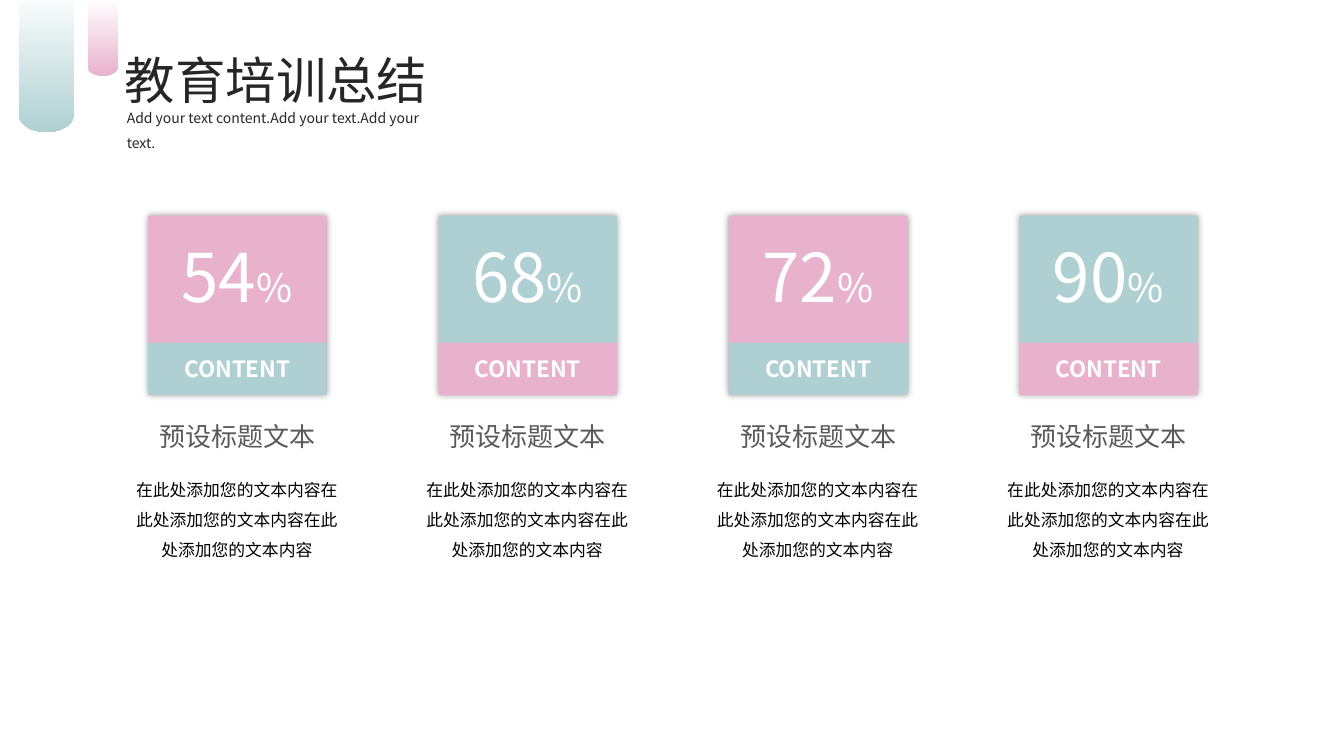
"""Builds the training summary slide with four percentage cards."""
import math
from dataclasses import dataclass

from lxml import etree
from pptx import Presentation
from pptx import util as u
from pptx.dml.color import RGBColor
from pptx.enum import shapes, text
from pptx.oxml.ns import qn


@dataclass(frozen=True)
class Theme:
    font: str = "Noto Sans CJK SC"
    pink: str = "E8B2CC"
    teal: str = "AFD0D2"
    white: str = "FFFFFF"
    ink: str = "262626"
    grey: str = "595959"
    black: str = "000000"
    title: float = 36
    subtitle: float = 10
    figure: float = 48
    percent: float = 28
    label: float = 16
    heading: float = 18.6
    body: float = 12


class SlideBuilder:
    def __init__(self, slide, theme):
        self.slide = slide
        self.theme = theme

    def add_runs(self, shape, runs, align=text.PP_ALIGN.LEFT, spacing=1.0, wrap=True, bold=None):
        frame = shape.text_frame
        frame.word_wrap = wrap
        paragraph = frame.paragraphs[0]
        paragraph.alignment = align
        paragraph.line_spacing = spacing
        for words, size, color in runs:
            run = paragraph.add_run()
            run.text = words
            run.font.name = self.theme.font
            run.font.size = u.Pt(size)
            run.font.bold = bold
            run.font.color.rgb = RGBColor.from_string(color)
            east_asian = etree.SubElement(run.font._element, qn("a:ea"))
            east_asian.set("typeface", self.theme.font)

    def text_box(self, left, top, width, height, runs, **style):
        shape = self.slide.shapes.add_textbox(*map(u.Inches, (left, top, width, height)))
        self.add_runs(shape, runs, **style)
        shape.text_frame.auto_size = text.MSO_AUTO_SIZE.SHAPE_TO_FIT_TEXT

    def rectangle(self, left, top, width, height, color):
        shape = self.slide.shapes.add_shape(
            shapes.MSO_SHAPE.RECTANGLE, *map(u.Inches, (left, top, width, height)))
        shape.shadow.inherit = False
        shape.fill.solid()
        shape.fill.fore_color.rgb = RGBColor.from_string(color)
        shape.line.fill.background()
        return shape

    def glow(self, shape, blur=5, opacity=40):
        effects = shape._element.spPr.find(qn("a:effectLst"))
        shadow = etree.SubElement(effects, qn("a:outerShdw"), blurRad=str(u.Pt(blur)),
                                  dist="0", dir="0", algn="ctr", rotWithShape="0")
        color = etree.SubElement(shadow, qn("a:srgbClr"), val=self.theme.black)
        etree.SubElement(color, qn("a:alpha"), val=str(opacity * 1000))

    def ribbon(self, left, top, width, straight_end, bottom, color, steps=40):
        radius = width / 2
        curve = [(left + radius + radius * math.cos(math.pi * step / steps),
                  straight_end + (bottom - straight_end) * math.sin(math.pi * step / steps))
                 for step in range(steps + 1)]
        points = [(u.Inches(x), u.Inches(y)) for x, y in [(left + width, top), *curve]]
        builder = self.slide.shapes.build_freeform(u.Inches(left), u.Inches(top))
        builder.add_line_segments(points, close=True)
        shape = builder.convert_to_shape()
        shape.shadow.inherit = False
        shape.line.fill.background()
        shape.fill.gradient()
        shape.fill.gradient_angle = 270
        stops = [(0.13, self.theme.white), (1, color)]
        for stop, (position, stop_color) in zip(shape.fill.gradient_stops, stops):
            stop.position = position
            stop.color.rgb = RGBColor.from_string(stop_color)

    def card(self, left, figure, card_color, label_color):
        theme, center = self.theme, text.PP_ALIGN.CENTER
        self.glow(self.rectangle(left, 2.14, 1.77, 1.77, card_color))
        label = self.rectangle(left, 3.4, 1.77, 0.52, label_color)
        label.text_frame.vertical_anchor = text.MSO_ANCHOR.MIDDLE
        self.add_runs(label, [("CONTENT", theme.label, theme.white)], align=center, bold=True)
        self.text_box(left + 0.22, 2.29, 1.32, 0.91,
                      [(figure, theme.figure, theme.white), ("%", theme.percent, theme.white)],
                      align=center, wrap=False)
        self.text_box(left + 0.01, 4.12, 1.75, 0.41,
                      [("预设标题文本", theme.heading, theme.grey)], align=center, wrap=False)
        self.text_box(left - 0.27, 4.61, 2.3, 1.01,
                      [("在此处添加您的文本内容" * 3, theme.body, theme.black)],
                      align=center, spacing=1.5)


def main():
    theme = Theme()
    presentation = Presentation()
    presentation.slide_width = u.Inches(13.33)
    presentation.slide_height = u.Inches(7.5)
    slide = presentation.slides.add_slide(presentation.slide_layouts[6])
    builder = SlideBuilder(slide, theme)

    builder.ribbon(0.19, -0.31, 0.54, 1.14, 1.31, theme.teal)
    builder.ribbon(0.87, -0.13, 0.3, 0.66, 0.75, theme.pink)
    builder.text_box(1.14, 0.44, 3.61, 0.71, [("教育培训总结", theme.title, theme.ink)])
    builder.text_box(1.16, 0.95, 3.4, 0.35,
                     [("Add your text content.Add your text.Add your text.",
                       theme.subtitle, theme.ink)], spacing=1.5, wrap=False)

    colors = [theme.pink, theme.teal]
    for index, figure in enumerate(["54", "68", "72", "90"]):
        builder.card(1.47 + 2.88 * index, figure, colors[index % 2], colors[(index + 1) % 2])

    presentation.save("out.pptx")


if __name__ == "__main__":
    main()
